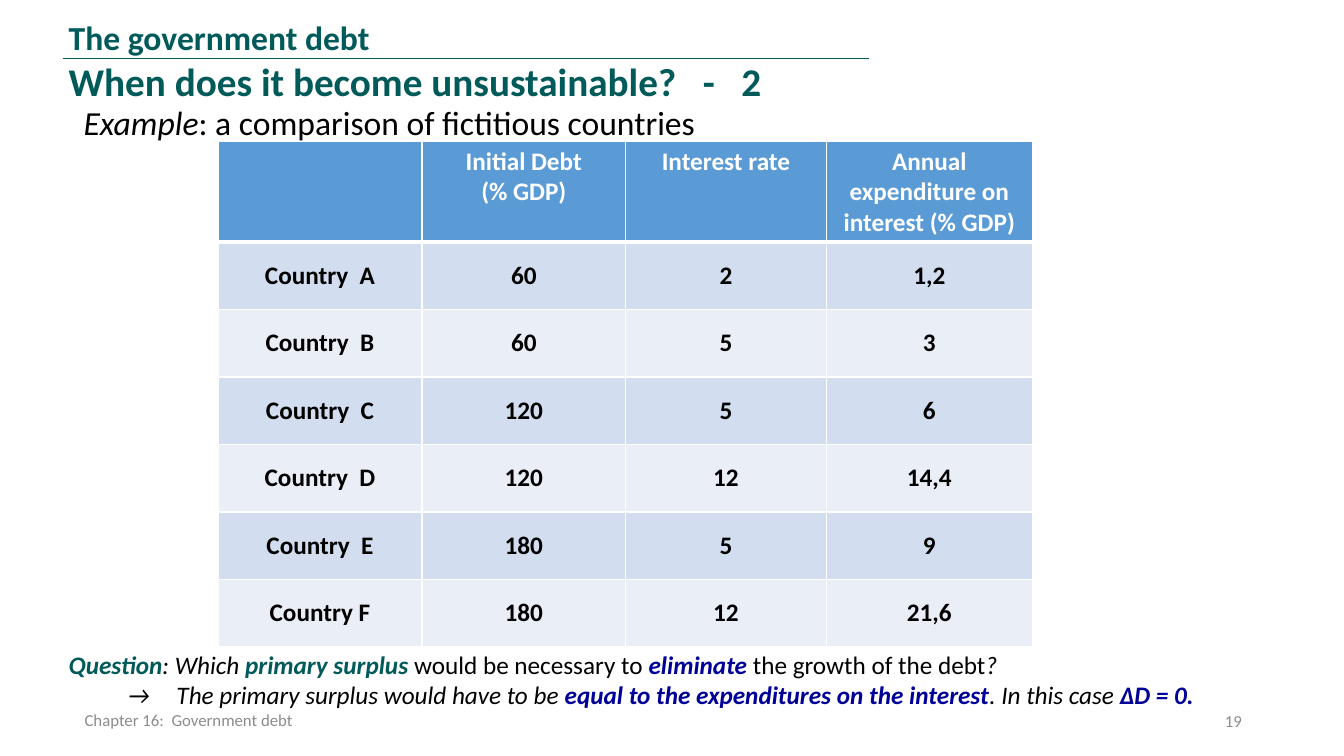
from dataclasses import dataclass

from lxml import etree
from pptx import Presentation, util as u
from pptx.dml.color import RGBColor
from pptx.enum import shapes, text
from pptx.oxml import ns


@dataclass(frozen=True)
class Theme:
    font: str = "Calibri"
    teal: str = "005A5A"
    rule: str = "005A58"
    navy: str = "000099"
    black: str = "000000"
    white: str = "FFFFFF"
    grey: str = "8C8C8C"
    header: str = "5B9BD5"
    bands: tuple = ("D2DEEF", "EAEFF7")
    title: float = 28
    heading: float = 24
    body: float = 18
    footer: float = 12


THEME = Theme()

PLAIN = {"bold": False, "italic": False}
BOLD = {"bold": True, "italic": False}
ITALIC = {"bold": False, "italic": True}
BOLD_ITALIC = {"bold": True, "italic": True}

HEADER = ("", "Initial Debt\n(% GDP)", "Interest rate",
          "Annual expenditure on interest (% GDP)")
COUNTRIES = (
    ("Country  A", "60", "2", "1,2"),
    ("Country  B", "60", "5", "3"),
    ("Country  C", "120", "5", "6"),
    ("Country  D", "120", "12", "14,4"),
    ("Country  E", "180", "5", "9"),
    ("Country F", "180", "12", "21,6"),
)


def write(para, content, size, color, style):
    span = para.add_run()
    span.text = content
    formats = {"name": THEME.font, "size": u.Pt(size), **style}
    for name, value in formats.items():
        setattr(span.font, name, value)
    span.font.color.rgb = RGBColor.from_string(color)


def add_text_frame(page, box, **formats):
    frame = page.shapes.add_textbox(*map(u.Pt, box)).text_frame
    for name, value in {"word_wrap": True, **formats}.items():
        setattr(frame, name, value)
    return frame


def add_title(page, box):
    left, top, width, height = box
    rule = page.shapes.add_connector(
        shapes.MSO_CONNECTOR.STRAIGHT,
        *map(u.Pt, (left + 2.8, top + 33.2, left + 578.8, top + 33.2)))
    rule.line.color.rgb = RGBColor.from_string(THEME.rule)
    rule.line.width = u.Pt(0.5)
    etree.SubElement(rule._element.spPr, ns.qn("a:effectLst"))

    frame = add_text_frame(page, box, auto_size=text.MSO_AUTO_SIZE.SHAPE_TO_FIT_TEXT)
    write(frame.paragraphs[0], "The government debt", THEME.heading, THEME.teal, BOLD)
    write(frame.add_paragraph(), "When does it become unsustainable?   -   2",
          THEME.title, THEME.teal, BOLD)


def add_example(page, box):
    frame = add_text_frame(page, box, vertical_anchor=text.MSO_ANCHOR.MIDDLE,
                           margin_bottom=u.Pt(18.2))
    para = frame.paragraphs[0]
    write(para, "Example", THEME.heading, THEME.black, ITALIC)
    write(para, ": a comparison of fictitious countries",
          THEME.heading, THEME.black, PLAIN)


def add_borders(cell, bottom):
    for side in "LRTB":
        width = bottom if side == "B" else 1
        line = etree.SubElement(cell._tc.get_or_add_tcPr(), ns.qn(f"a:ln{side}"),
                                w=str(u.Pt(width)))
        fill = etree.SubElement(line, ns.qn("a:solidFill"))
        etree.SubElement(fill, ns.qn("a:srgbClr"), val=THEME.white)


def fill_cell(cell, content, fill, color, anchor, bottom):
    add_borders(cell, bottom)
    cell.fill.solid()
    cell.fill.fore_color.rgb = RGBColor.from_string(fill)
    cell.vertical_anchor = anchor
    for index, line in enumerate(content.split("\n") if content else ()):
        frame = cell.text_frame
        para = frame.add_paragraph() if index else frame.paragraphs[0]
        para.alignment = text.PP_ALIGN.CENTER
        write(para, line, THEME.body, color, BOLD)


def add_debt_table(page, box):
    rows = (HEADER, *COUNTRIES)
    header_height = 72
    row_height = (box[3] - header_height) / len(COUNTRIES)
    table = page.shapes.add_table(len(rows), len(HEADER), *map(u.Pt, box)).table
    for column, width in zip(table.columns, (145.6, 145.6, 143.2, 147.4)):
        column.width = u.Pt(width)
    for index, values in enumerate(rows):
        table.rows[index].height = u.Pt(row_height if index else header_height)
        if index:
            look = (THEME.bands[(index - 1) % 2], THEME.black,
                    text.MSO_ANCHOR.MIDDLE, 1)
        else:
            look = (THEME.header, THEME.white, text.MSO_ANCHOR.TOP, 3)
        for cell, value in zip(table.rows[index].cells, values):
            fill_cell(cell, value, *look)


def add_question(page, box):
    frame = add_text_frame(page, box, auto_size=text.MSO_AUTO_SIZE.SHAPE_TO_FIT_TEXT)
    question = (
        ("Question", THEME.teal, BOLD_ITALIC),
        (": Which ", THEME.black, ITALIC),
        ("primary surplus ", THEME.teal, BOLD_ITALIC),
        ("would be necessary to ", THEME.black, PLAIN),
        ("eliminate", THEME.navy, BOLD_ITALIC),
        (" the growth of the debt", THEME.black, PLAIN),
        ("?", THEME.black, ITALIC),
    )
    answer = (
        ("→\tThe primary surplus would have to be ", THEME.black, ITALIC),
        ("equal to the expenditures on the interest", THEME.navy, BOLD_ITALIC),
        (". In this case ", THEME.black, ITALIC),
        ("∆D = 0.", THEME.navy, BOLD_ITALIC),
    )
    answer_para = frame.add_paragraph()
    hanging = {"marL": u.Pt(77), "indent": u.Pt(-35)}
    for name, value in hanging.items():
        answer_para._p.get_or_add_pPr().set(name, str(value))
    for para, spans in zip(frame.paragraphs, (question, answer)):
        for content, color, style in spans:
            write(para, content, THEME.body, color, style)


def add_footer(page, box, content, alignment):
    frame = add_text_frame(page, box, vertical_anchor=text.MSO_ANCHOR.MIDDLE)
    para = frame.paragraphs[0]
    para.alignment = alignment
    write(para, content, THEME.footer, THEME.grey, PLAIN)


def main():
    deck = Presentation()
    deck.slide_width, deck.slide_height = u.Pt(960), u.Pt(540)
    page = deck.slides.add_slide(deck.slide_layouts[6])
    add_title(page, (42, 8.6, 706.3, 70.6))
    add_debt_table(page, (155.8, 100.8, 581.8, 361.4))
    add_example(page, (52.6, 79.9, 832.3, 28.8))
    add_question(page, (42, 460, 873.4, 51.1))
    add_footer(page, (53.3, 499.7, 250.6, 28.8), "Chapter 16:  Government debt",
               text.PP_ALIGN.LEFT)
    add_footer(page, (678.2, 500.4, 216, 28.8), "19", text.PP_ALIGN.RIGHT)
    deck.save("out.pptx")


if __name__ == "__main__":
    main()
